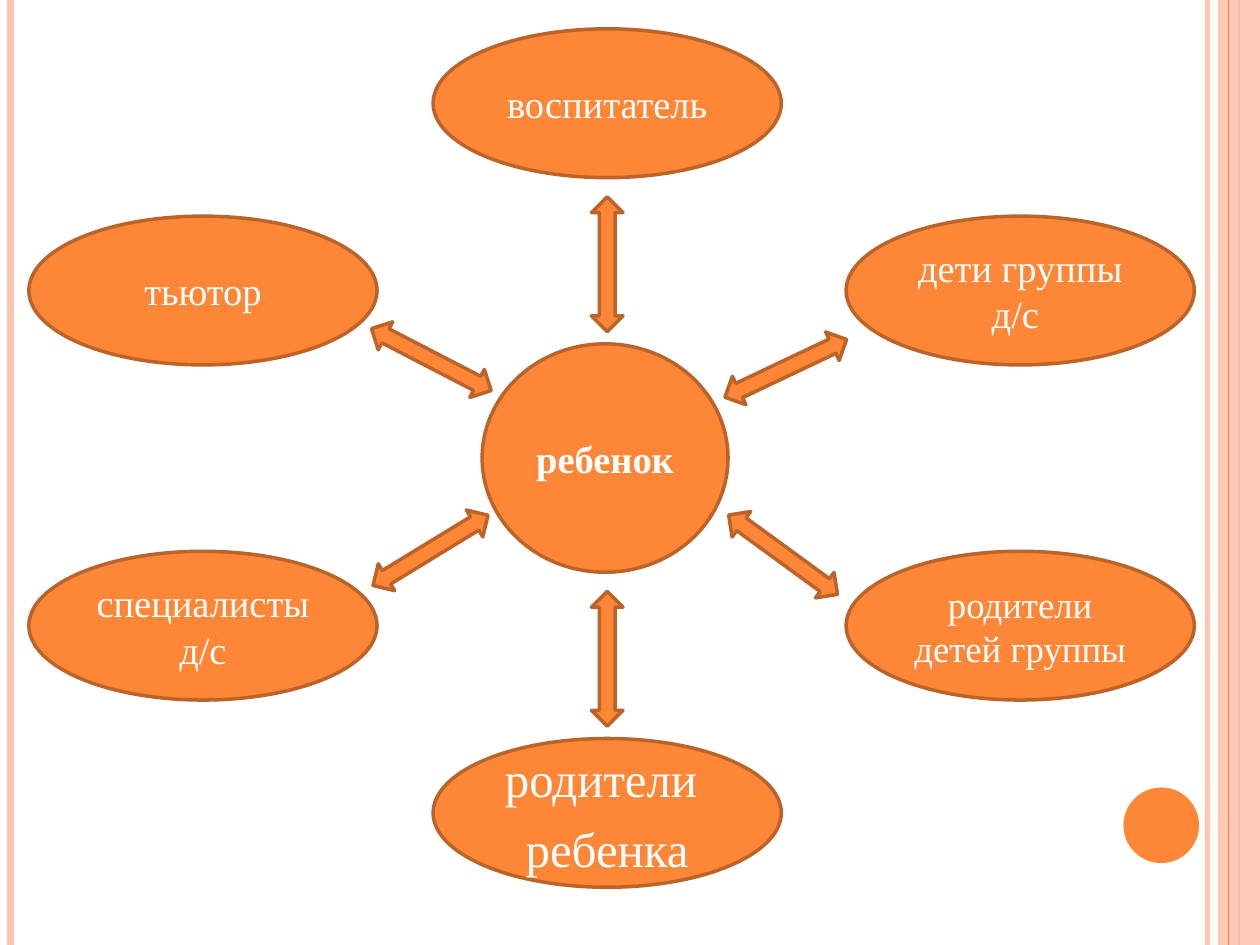
from dataclasses import dataclass
from lxml.etree import SubElement
from pptx import Presentation
from pptx.dml.color import RGBColor
from pptx.enum.shapes import MSO_CONNECTOR, MSO_SHAPE
from pptx.enum.text import MSO_ANCHOR, PP_ALIGN
from pptx.oxml.ns import qn
from pptx.util import Pt


@dataclass(frozen=True)
class Theme:
    main: RGBColor = RGBColor(0xFE, 0x86, 0x37)
    edge: RGBColor = RGBColor(0xBC, 0x63, 0x29)
    pale: RGBColor = RGBColor(0xFE, 0xC3, 0xAE)
    text: RGBColor = RGBColor(0xFF, 0xFF, 0xFF)
    font: str = "Times New Roman"
    small: float = 21
    base: float = 22
    large: float = 28
    stroke: float = 2


THEME = Theme()
CARD = (199, 85)
ARROW = (77, 18)


def fade(node, share):
    """Set the opacity, in percent, of the solid fill under a node."""
    tint = node.find(qn("a:solidFill"))[0]
    SubElement(tint, qn("a:alpha"), val=str(share * 1000))


def add_form(slide, kind, box, fill, edge=None):
    form = slide.shapes.add_shape(kind, *(Pt(v) for v in box))
    form.shadow.inherit = False
    form.fill.solid()
    form.fill.fore_color.rgb = fill
    if edge is None:
        form.line.fill.background()
    else:
        form.line.color.rgb = edge
        form.line.width = Pt(THEME.stroke)
    return form


def add_rule(slide, x, top, height, color, width, share=100):
    rule = slide.shapes.add_connector(
        MSO_CONNECTOR.STRAIGHT, Pt(x), Pt(top), Pt(x), Pt(top + height))
    rule.line.color.rgb = color
    rule.line.width = Pt(width)
    SubElement(rule._element.spPr, qn("a:effectLst"))
    if share < 100:
        fade(rule.line._get_or_add_ln(), share)


def add_oval(slide, box, lines, size, bold=False):
    oval = add_form(slide, MSO_SHAPE.OVAL, box, THEME.main, THEME.edge)
    frame = oval.text_frame
    frame.word_wrap = True
    frame.vertical_anchor = MSO_ANCHOR.MIDDLE
    for i, line in enumerate(lines):
        para = frame.paragraphs[0] if i == 0 else frame.add_paragraph()
        para.text = line
        para.alignment = PP_ALIGN.CENTER
        if i:
            para.space_before = Pt(6)
        font = para.font
        font.name, font.size, font.bold = THEME.font, Pt(size), bold
        font.color.rgb = THEME.text


def draw_frame(slide, left, top, width, height):
    """Side stripes and the corner dot."""
    right = left + width
    add_rule(slide, right - 30, top, height, THEME.pale, 3, 93)
    add_rule(slide, left + 6, top, height, THEME.pale, 4.5)
    add_rule(slide, right - 12, top, height, THEME.main, 1.5)
    band = add_form(slide, MSO_SHAPE.RECTANGLE,
                    (right - 24, top, 24, height), THEME.pale)
    fade(band._element.spPr, 87)
    add_rule(slide, right - 18, top, height, THEME.main, 0.75)
    add_form(slide, MSO_SHAPE.OVAL,
             (right - 78, top + height - 90, 43.2, 43.2), THEME.main)


def draw_wheel(slide, left, top, width, height):
    """Child in the middle, six partners around, an arrow to each."""
    wide, high = CARD
    mid, far = 231, width - wide
    low = height - high
    step = 107

    # Card offset, lines, size; arrow centre and turn
    cards = [
        (0, step, ["тьютор"], THEME.base, (230, 189, 27.4)),
        (mid, 0, ["воспитатель"], THEME.base, (330.5, 134.5, 90)),
        (far, step, ["дети группы д/с "], THEME.base, (432.5, 194, 154.6)),
        (far, low - step, ["родители детей группы"], THEME.small,
         (431, 300.5, 36.1)),
        (mid, low, ["родители ", "ребенка"], THEME.large, (330.5, 360, 90)),
        (0, low - step, ["специалисты д/с"], THEME.base,
         (229.5, 298, 148.6)),
    ]
    for x, y, lines, size, _ in cards:
        add_oval(slide, (left + x, top + y, wide, high), lines, size)

    # Hub
    hub = 130.5
    add_oval(slide, (left + 259, top + (height - hub) / 2, 140.5, hub),
             ["ребенок"], THEME.base, bold=True)

    # Arrows
    long, thick = ARROW
    for *_, (x, y, turn) in cards:
        box = (left + x - long / 2, top + y - thick / 2, long, thick)
        arrow = add_form(slide, MSO_SHAPE.LEFT_RIGHT_ARROW, box,
                         THEME.main, THEME.edge)
        arrow.rotation = turn


def main():
    deck = Presentation()
    deck.slide_width, deck.slide_height = Pt(720), Pt(540)
    slide = deck.slides.add_slide(deck.slide_layouts[6])
    draw_frame(slide, 0, 0, 720, 540)
    draw_wheel(slide, 16.5, 16.5, 666, 490.5)
    deck.save("out.pptx")


if __name__ == "__main__":
    main()
